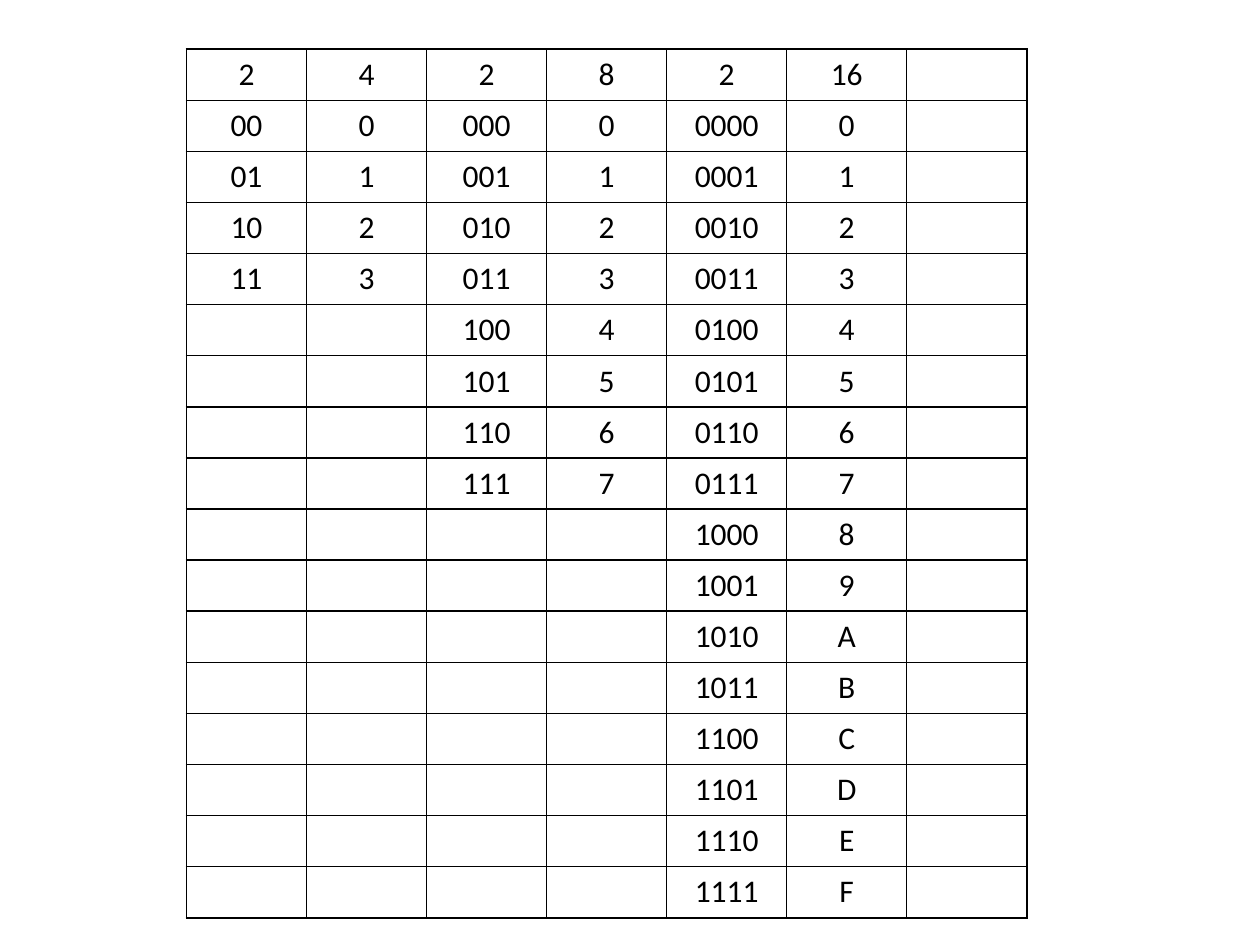
from lxml import etree
from pptx import Presentation
from pptx.dml.color import RGBColor
from pptx.enum.text import PP_ALIGN
from pptx.oxml.ns import qn
from pptx.util import Inches, Pt

CENTER = PP_ALIGN.CENTER
COLORS = {"ink": "000000"}
EDGES = ("a:lnL", "a:lnR", "a:lnT", "a:lnB")
BIT_WIDTHS = (2, 3, 4)
ROWS = 2 ** max(BIT_WIDTHS) + 1
COLUMNS = 2 * len(BIT_WIDTHS) + 1


class Sheet:
    font = "Calibri"
    size = Pt(18)
    border = Pt(1)

    def __init__(self, deck):
        self.width, self.height = deck.slide_width, deck.slide_height
        self.slide = deck.slides.add_slide(deck.slide_layouts[6])

    def outline(self, cell):
        properties = cell._tc.get_or_add_tcPr()
        for edge in EDGES:
            line = etree.SubElement(properties, qn(edge), w=str(self.border))
            fill = etree.SubElement(line, qn("a:solidFill"))
            etree.SubElement(fill, qn("a:srgbClr"), val=COLORS["ink"])

    def label(self, cell, text):
        paragraph = cell.text_frame.paragraphs[0]
        paragraph.text = text
        paragraph.alignment = CENTER
        for run in paragraph.runs:
            run.font.name = self.font
            run.font.size = self.size
            run.font.color.rgb = RGBColor.from_string(COLORS["ink"])

    def table(self, entries, left, top, width, height):
        grid = self.slide.shapes.add_table(
            ROWS, COLUMNS,
            round(left * self.width), round(top * self.height),
            round(width * self.width), round(height * self.height),
        ).table
        grid.first_row = False
        grid.horz_banding = False
        for row in range(ROWS):
            for column in range(COLUMNS):
                cell = grid.cell(row, column)
                self.outline(cell)
                cell.fill.background()
                if (row, column) in entries:
                    self.label(cell, entries[row, column])


def conversions():
    entries = {}
    for pair, bits in enumerate(BIT_WIDTHS):
        base = 2 ** bits
        binary, digit = 2 * pair, 2 * pair + 1
        entries[0, binary], entries[0, digit] = "2", str(base)
        for value in range(base):
            entries[value + 1, binary] = f"{value:0{bits}b}"
            entries[value + 1, digit] = f"{value:X}"
    return entries


def main():
    deck = Presentation()
    deck.slide_width, deck.slide_height = Inches(10), Inches(7.5)
    Sheet(deck).table(conversions(), left=1.48 / 10, top=0.39 / 7.5,
                      width=6.67 / 10, height=6.89 / 7.5)
    deck.save("out.pptx")


if __name__ == "__main__":
    main()
